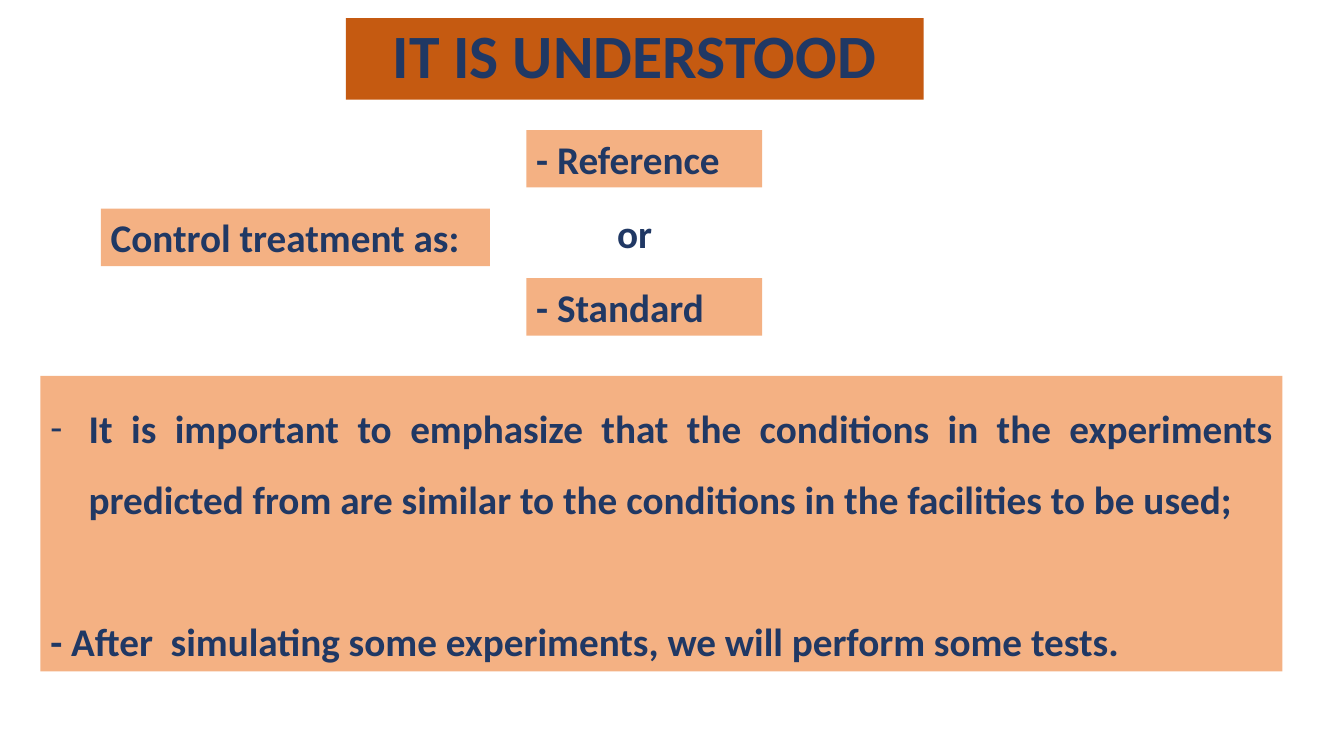
from dataclasses import dataclass

from lxml.etree import SubElement
from pptx import Presentation
from pptx.dml.color import RGBColor
from pptx.enum.text import MSO_ANCHOR, MSO_AUTO_SIZE, PP_ALIGN
from pptx.oxml.ns import qn
from pptx.util import Inches, Pt


@dataclass(frozen=True)
class Theme:
    font: str = "Calibri"
    ink: RGBColor = RGBColor(0x20, 0x38, 0x64)
    title_fill: RGBColor = RGBColor(0xC5, 0x5A, 0x11)
    panel_fill: RGBColor = RGBColor(0xF4, 0xB1, 0x83)
    title_size: Pt = Pt(44)
    text_size: Pt = Pt(28)


THEME = Theme()


def place(sp, left, top, width, height):
    sp.left, sp.top = Inches(left), Inches(top)
    sp.width, sp.height = Inches(width), Inches(height)


def fill_with(sp, color):
    sp.fill.solid()
    sp.fill.fore_color.rgb = color


def format_text(p, size, align, line_spacing=1.0):
    p.alignment = align
    p.line_spacing = line_spacing
    p.space_before = Pt(0)
    for r in p.runs:
        r.font.name = THEME.font
        r.font.size = size
        r.font.bold = True
        r.font.color.rgb = THEME.ink


def set_bullet(p, char=None, indent=0):
    """Give the paragraph a hanging bullet, or none if char is left out."""
    pPr = p._p.get_or_add_pPr()
    pPr.set("marL", str(Inches(indent)))
    pPr.set("indent", str(-Inches(indent)))
    if char:
        SubElement(pPr, qn("a:buFont"), typeface=THEME.font)
        SubElement(pPr, qn("a:buChar"), char=char)
    else:
        SubElement(pPr, qn("a:buNone"))


def add_title(s, text):
    sp = s.shapes.title
    place(sp, 3.43, 0.18, 5.73, 0.81)
    fill_with(sp, THEME.title_fill)
    tf = sp.text_frame
    tf.text = text
    tf.auto_size = MSO_AUTO_SIZE.NONE
    tf.vertical_anchor = MSO_ANCHOR.MIDDLE
    format_text(tf.paragraphs[0], THEME.title_size, PP_ALIGN.CENTER, 0.9)


def add_label(s, text, left, top, width, fill=None, align=PP_ALIGN.LEFT):
    sp = s.shapes.add_textbox(Inches(left), Inches(top), Inches(width), Inches(0.57))
    if fill is not None:
        fill_with(sp, fill)
    tf = sp.text_frame
    tf.word_wrap = True
    tf.text = text
    format_text(tf.paragraphs[0], THEME.text_size, align)


def add_notes_panel(s, bulleted, closing):
    sp = s.placeholders[1]
    place(sp, 0.4, 3.73, 12.32, 2.93)
    fill_with(sp, THEME.panel_fill)
    tf = sp.text_frame
    tf.auto_size = MSO_AUTO_SIZE.NONE
    tf.vertical_anchor = MSO_ANCHOR.TOP
    tf.text = bulleted
    tf.add_paragraph().text = closing
    first, last = tf.paragraphs
    for p in (first, last):
        format_text(p, THEME.text_size, PP_ALIGN.JUSTIFY, 1.5)
    last.space_before = Pt(51)
    set_bullet(first, "-", 0.38)
    set_bullet(last)


def main():
    prs = Presentation()
    prs.slide_width, prs.slide_height = Inches(13.33), Inches(7.5)
    s = prs.slides.add_slide(prs.slide_layouts[1])

    add_title(s, "IT IS UNDERSTOOD")
    add_label(s, "Control treatment as:", 1, 2.07, 3.86, THEME.panel_fill)
    for text, top in (("- Reference", 1.29), ("- Standard", 2.76)):
        add_label(s, text, 5.22, top, 2.34, THEME.panel_fill)
    add_label(s, "or", 5.93, 2.03, 0.73, align=PP_ALIGN.CENTER)
    add_notes_panel(
        s,
        "It is important to emphasize that the conditions in the experiments "
        "predicted from are similar to the conditions in the facilities to be used;",
        "- After  simulating some experiments, we will perform some tests.",
    )
    prs.save("out.pptx")


if __name__ == "__main__":
    main()
